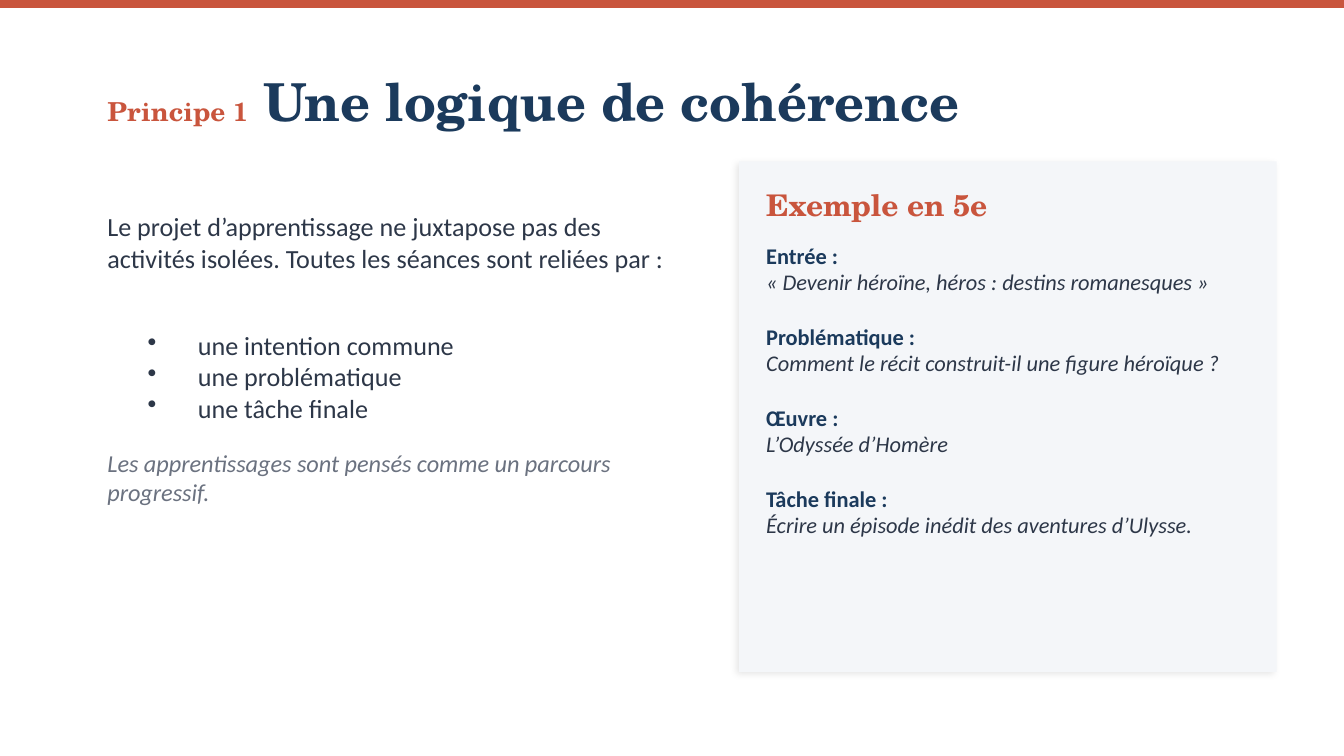
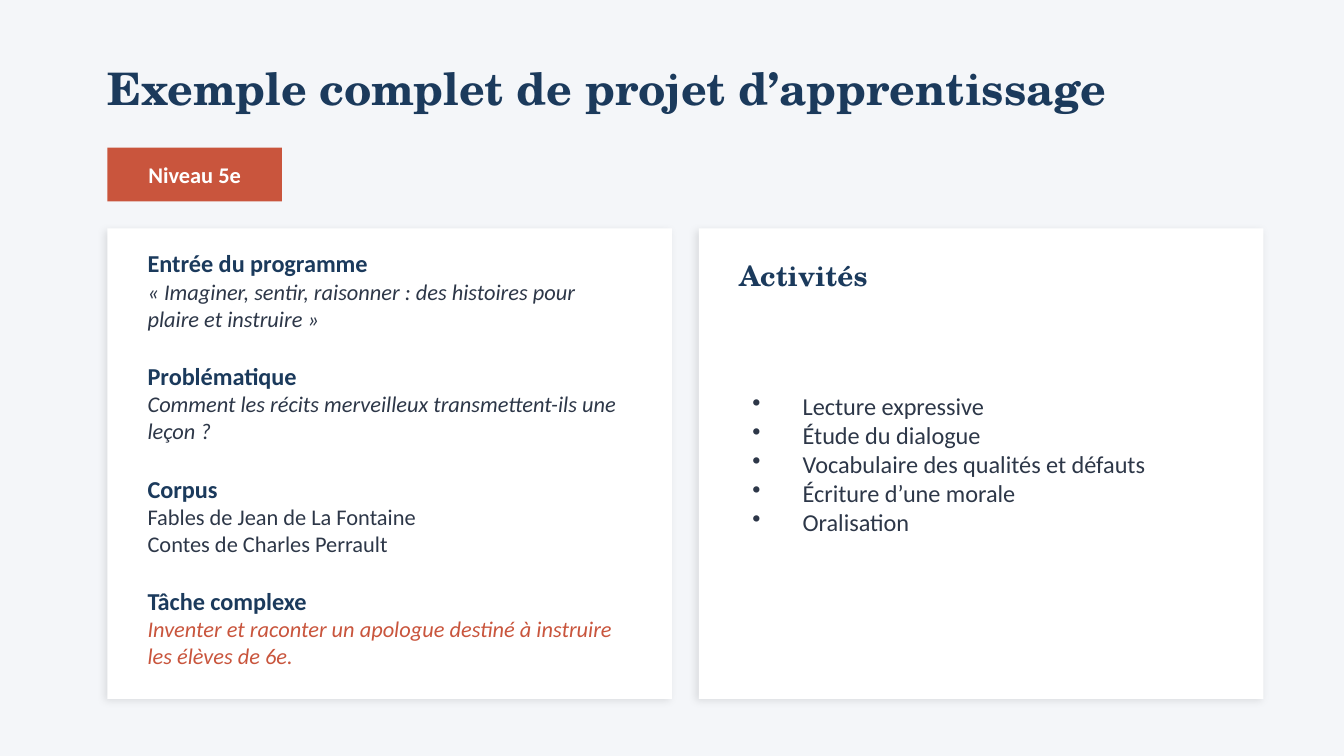
from dataclasses import dataclass
from typing import NamedTuple

from lxml.etree import SubElement
from pptx import Presentation
from pptx.dml.color import RGBColor
from pptx.enum.shapes import MSO_SHAPE
from pptx.enum.text import MSO_ANCHOR, PP_ALIGN
from pptx.oxml.ns import qn
from pptx.util import Cm, Pt

WHITE, PALE = "FFFFFF", "F4F6F9"
NAVY, RUST, INK, GREY = "1B3A5C", "C9553D", "2D3748", "6B7280"
SERIF, SANS = "TeX Gyre Schola", "Calibri"
LEFT, TITLE_TOP, TITLE_W = 2.03, 0.76, 21.34
COLUMN_W, INNER_W = 10.67, 9.14
LINE_HEIGHT = 1.22


class Area(NamedTuple):
    left: float
    top: float
    width: float
    height: float


class Style(NamedTuple):
    size: float
    color: str = INK
    font: str = SANS
    bold: bool = False
    italic: bool = False


class Span(NamedTuple):
    text: str
    style: Style


class Section(NamedTuple):
    label: str
    lines: list[str]
    style: Style


@dataclass
class TextBlock:
    area: Area
    paragraphs: list[list[Span]]
    middle: bool = True
    inset: bool = False
    bullets: bool = False
    gaps: dict[int, float] | None = None


def rgb(value: str) -> RGBColor:
    return RGBColor.from_string(value)


def cm(area: Area) -> list[Cm]:
    return [Cm(v) for v in area]


def format_run(r, style: Style) -> None:
    r.font.size = Pt(style.size)
    r.font.name = style.font
    r.font.bold = style.bold
    r.font.italic = style.italic
    r.font.color.rgb = rgb(style.color)


def add_bullet(p) -> None:
    pPr = p._p.get_or_add_pPr()
    pPr.set("marL", str(Cm(0.95)))
    pPr.set("indent", str(-Cm(0.95)))
    SubElement(pPr, qn("a:buChar"), char="•")


def add_text(s, block: TextBlock) -> None:
    tf = s.shapes.add_textbox(*cm(block.area)).text_frame
    tf.word_wrap = True
    tf.vertical_anchor = MSO_ANCHOR.MIDDLE if block.middle else MSO_ANCHOR.TOP
    if not block.inset:
        tf.margin_left = tf.margin_right = tf.margin_top = tf.margin_bottom = 0
    for i, spans in enumerate(block.paragraphs):
        p = tf.add_paragraph() if i else tf.paragraphs[0]
        if block.bullets:
            add_bullet(p)
        if block.gaps and i in block.gaps:
            p.space_before = Pt(block.gaps[i])
        for span in spans:
            r = p.add_run()
            r.text = span.text
            format_run(r, span.style)


def add_line(s, area: Area, text: str, style: Style) -> None:
    add_text(s, TextBlock(area, [[Span(text, style)]]))


def add_list(s, area: Area, items: list[str], size: float) -> None:
    paragraphs = [[Span(item, Style(size))] for item in items]
    add_text(s, TextBlock(area, paragraphs, inset=True, bullets=True))


def add_sections(s, area: Area, sections: list[Section], label_size: float) -> None:
    label_style = Style(label_size, NAVY, bold=True)
    paragraphs: list[list[Span]] = []
    gaps: dict[int, float] = {}
    for section in sections:
        if paragraphs:
            gaps[len(paragraphs)] = round(label_size * LINE_HEIGHT, 1)
        paragraphs.append([Span(section.label, label_style)])
        paragraphs += [[Span(line, section.style)] for line in section.lines]
    add_text(s, TextBlock(area, paragraphs, middle=False, gaps=gaps))


def add_rect(s, area: Area, fill: str):
    sp = s.shapes.add_shape(MSO_SHAPE.RECTANGLE, *cm(area))
    sp.shadow.inherit = False
    sp.fill.solid()
    sp.fill.fore_color.rgb = rgb(fill)
    sp.line.fill.background()
    return sp


def add_card(s, area: Area, fill: str) -> None:
    sp = add_rect(s, area, fill)
    effects = sp._element.spPr.find(qn("a:effectLst"))
    shadow = SubElement(effects, qn("a:outerShdw"), blurRad=str(Pt(4)),
                        dist=str(Pt(2)), dir=str(135 * 60000),
                        algn="bl", rotWithShape="0")
    color = SubElement(shadow, qn("a:srgbClr"), val="000000")
    SubElement(color, qn("a:alpha"), val="10000")


def add_badge(s, area: Area, text: str) -> None:
    tf = add_rect(s, area, RUST).text_frame
    tf.text = text
    tf.vertical_anchor = MSO_ANCHOR.MIDDLE
    p = tf.paragraphs[0]
    p.alignment = PP_ALIGN.CENTER
    format_run(p.runs[0], Style(12, WHITE, bold=True))


def add_slide(prs, background: str):
    s = prs.slides.add_slide(prs.slide_layouts[6])
    s.background.fill.solid()
    s.background.fill.fore_color.rgb = rgb(background)
    return s


def build_principle(prs) -> None:
    s = add_slide(prs, WHITE)
    add_rect(s, Area(0, 0, 25.4, 0.15), RUST)
    title = [Span("Principe 1", Style(14, RUST, SERIF, bold=True)),
             Span(" Une logique de cohérence", Style(28, NAVY, SERIF, bold=True))]
    add_text(s, TextBlock(Area(LEFT, TITLE_TOP, TITLE_W, 2.29), [title]))
    add_line(s, Area(LEFT, 3.56, COLUMN_W, 2.03),
             "Le projet d’apprentissage ne juxtapose pas des activités isolées. "
             "Toutes les séances sont reliées par :", Style(14))
    add_list(s, Area(2.54, 5.59, 9.65, 3.05),
             ["une intention commune", "une problématique", "une tâche finale"], 14)
    add_line(s, Area(LEFT, 8.38, COLUMN_W, 1.27),
             "Les apprentissages sont pensés comme un parcours progressif.",
             Style(13, GREY, italic=True))

    add_card(s, Area(13.97, 3.05, 10.16, 9.65), PALE)
    add_line(s, Area(14.48, 3.3, INNER_W, 1.14), "Exemple en 5e",
             Style(16, RUST, SERIF, bold=True))
    answer = Style(12, italic=True)
    add_sections(s, Area(14.48, 4.57, INNER_W, 7.62), [
        Section("Entrée :", ["« Devenir héroïne, héros : destins romanesques »"], answer),
        Section("Problématique :",
                ["Comment le récit construit-il une figure héroïque ?"], answer),
        Section("Œuvre :", ["L’Odyssée d’Homère"], answer),
        Section("Tâche finale :",
                ["Écrire un épisode inédit des aventures d’Ulysse."], answer),
    ], 12)


def build_example(prs) -> None:
    s = add_slide(prs, PALE)
    add_line(s, Area(LEFT, TITLE_TOP, TITLE_W, 1.78),
             "Exemple complet de projet d’apprentissage",
             Style(24, NAVY, SERIF, bold=True))
    add_badge(s, Area(LEFT, 2.79, 3.3, 1.02), "Niveau 5e")

    card_gap, padding, inner_top = 0.51, 0.76, 4.7
    card_lefts = [LEFT + i * (COLUMN_W + card_gap) for i in range(2)]
    for left in card_lefts:
        add_card(s, Area(left, 4.32, COLUMN_W, 8.89), WHITE)
    program_left, activities_left = [left + padding for left in card_lefts]

    quote = Style(12, italic=True)
    add_sections(s, Area(program_left, inner_top, INNER_W, 8.13), [
        Section("Entrée du programme",
                ["« Imaginer, sentir, raisonner : des histoires pour plaire et instruire »"],
                quote),
        Section("Problématique",
                ["Comment les récits merveilleux transmettent-ils une leçon ?"], quote),
        Section("Corpus",
                ["Fables de Jean de La Fontaine", "Contes de Charles Perrault"], Style(12)),
        Section("Tâche complexe",
                ["Inventer et raconter un apologue destiné à instruire les élèves de 6e."],
                Style(12, RUST, italic=True)),
    ], 13)
    add_line(s, Area(activities_left, inner_top, INNER_W, 1.02), "Activités",
             Style(15, NAVY, SERIF, bold=True))
    add_list(s, Area(activities_left, 5.97, INNER_W, 5.59), [
        "Lecture expressive", "Étude du dialogue", "Vocabulaire des qualités et défauts",
        "Écriture d’une morale", "Oralisation"], 13)


def main() -> None:
    prs = Presentation()
    prs.slide_width, prs.slide_height = Cm(25.4), Cm(14.29)
    build_principle(prs)
    build_example(prs)
    prs.save("out.pptx")


if __name__ == "__main__":
    main()
